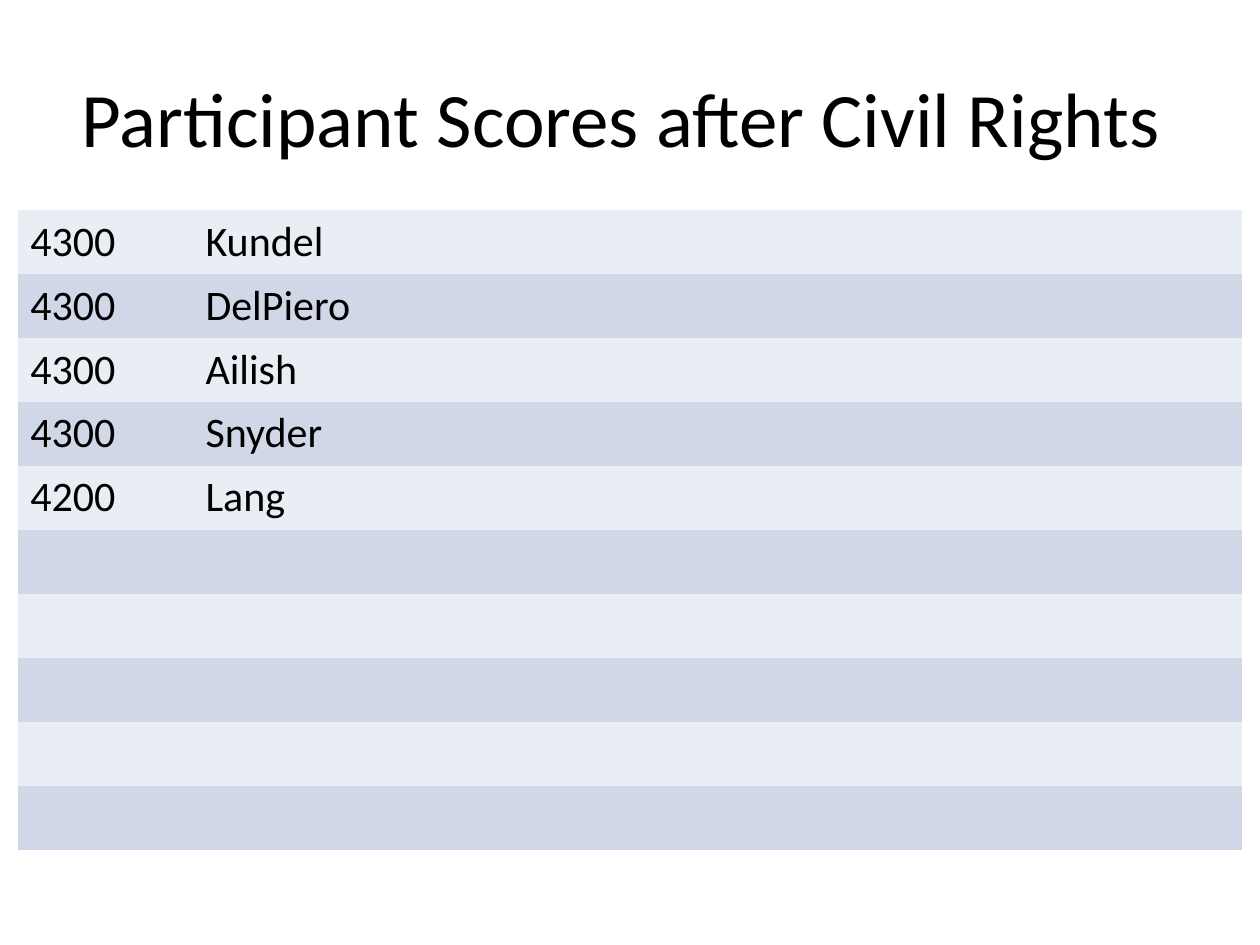
from dataclasses import dataclass

import pptx
import pptx.dml.color
import pptx.enum.text
import pptx.util

Cm = pptx.util.Cm
Pt = pptx.util.Pt
RGB = pptx.dml.color.RGBColor


@dataclass(frozen=True)
class Theme:
    font: str = "Calibri"
    title_size: int = 44
    score_size: int = 24
    ink: str = "000000"
    bands: tuple = ("E9EDF4", "D0D8E8")


THEME = Theme()
PLAIN_TABLE_STYLE = "{2D5ABB26-0587-4C30-8999-92F81FD0307C}"
TITLE = "Participant Scores after Civil Rights "
SCORES = [
    ("4300", "Kundel"),
    ("4300", "DelPiero"),
    ("4300", "Ailish"),
    ("4300", "Snyder"),
    ("4200", "Lang"),
]
ROW_COUNT = 10
ROW_HEIGHT = Cm(1.29)
COLUMN_WIDTHS = [Cm(3.53), Cm(8.81)] * 2  # score and name, twice


def set_attributes(target, values):
    for attribute, value in values.items():
        setattr(target, attribute, value)


def format_font(font, size):
    set_attributes(font, {"name": THEME.font, "size": Pt(size)})
    font.color.rgb = RGB.from_string(THEME.ink)


def add_title(slide):
    title = slide.shapes.title
    set_attributes(title, {"left": Cm(1.27), "top": Cm(0.76),
                           "width": Cm(22.86), "height": Cm(3.18)})
    set_attributes(title.text_frame, {
        "text": TITLE,
        "word_wrap": True,
        "vertical_anchor": pptx.enum.text.MSO_ANCHOR.MIDDLE,
    })
    heading = title.text_frame.paragraphs[0]
    heading.alignment = pptx.enum.text.PP_ALIGN.CENTER
    format_font(heading.runs[0].font, THEME.title_size)


def fill_cell(cell, text, band):
    cell.fill.solid()
    cell.fill.fore_color.rgb = RGB.from_string(band)
    entry = cell.text_frame.paragraphs[0]
    entry.text = text
    format_font(entry.font, THEME.score_size)
    for run in entry.runs:
        format_font(run.font, THEME.score_size)


def add_scoreboard(slide):
    scoreboard = slide.shapes.add_table(
        ROW_COUNT, len(COLUMN_WIDTHS), Cm(0.36), Cm(4.23),
        sum(COLUMN_WIDTHS), ROW_HEIGHT * ROW_COUNT).table
    set_attributes(scoreboard, {"first_row": False, "horz_banding": False})
    # Plain style: no grid lines between the bands
    scoreboard._tbl.tblPr.find(
        pptx.oxml.ns.qn("a:tableStyleId")).text = PLAIN_TABLE_STYLE

    for column, width in zip(scoreboard.columns, COLUMN_WIDTHS):
        column.width = width
    for index, row in enumerate(scoreboard.rows):
        row.height = ROW_HEIGHT
        entries = SCORES[index] if index < len(SCORES) else ()
        for position, cell in enumerate(row.cells):
            text = entries[position] if position < len(entries) else ""
            fill_cell(cell, text, THEME.bands[index % 2])


def main():
    deck = pptx.Presentation()
    set_attributes(deck, {"slide_width": Cm(25.4), "slide_height": Cm(19.05)})
    slide = deck.slides.add_slide(deck.slide_layouts[5])  # title only
    # Heading
    add_title(slide)
    # Scores and names
    add_scoreboard(slide)
    deck.save("out.pptx")


if __name__ == "__main__":
    main()
